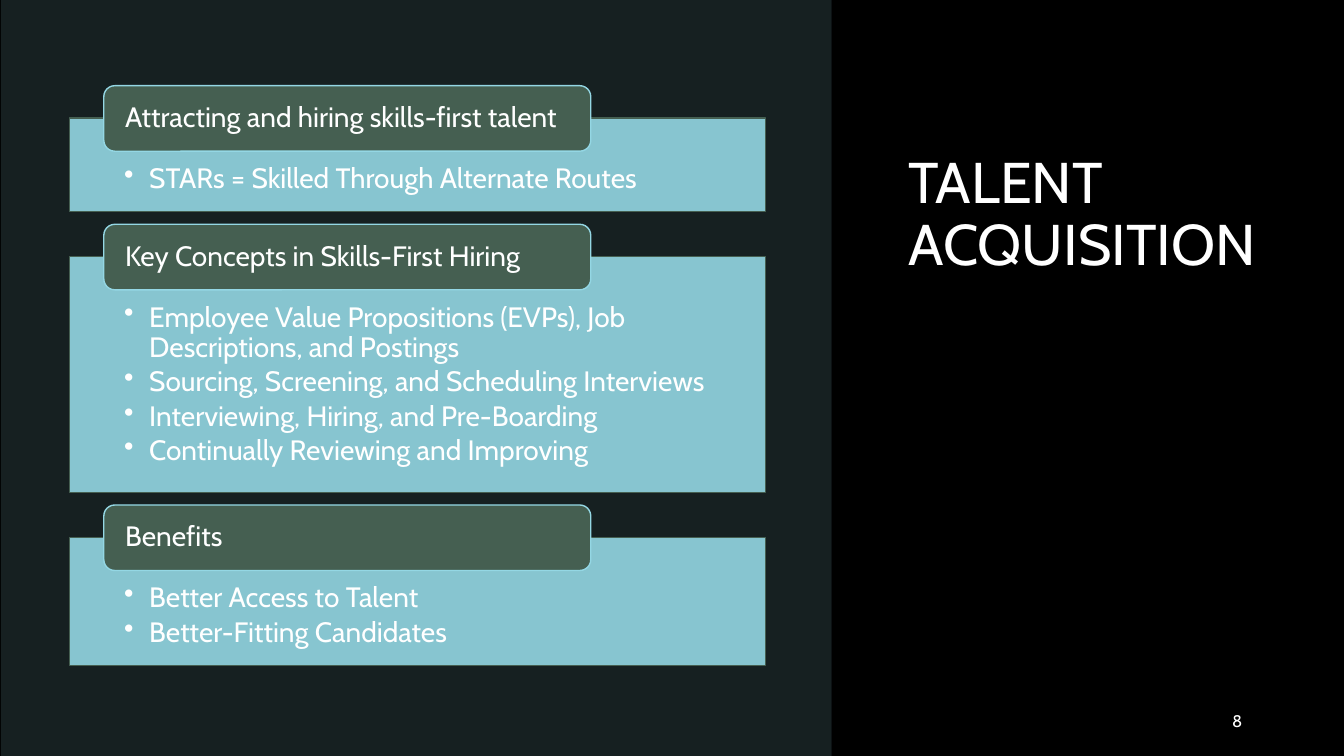
"""Build the talent acquisition slide."""
from lxml import etree
from pptx import Presentation
from pptx.dml.color import RGBColor
from pptx.enum.shapes import MSO_SHAPE
from pptx.enum.text import MSO_ANCHOR, MSO_AUTO_SIZE, PP_ALIGN
from pptx.oxml.ns import qn
from pptx.util import Inches, Pt

RECT, ROUND = MSO_SHAPE.RECTANGLE, MSO_SHAPE.ROUNDED_RECTANGLE
TOP, MIDDLE = MSO_ANCHOR.TOP, MSO_ANCHOR.MIDDLE
LEFT, RIGHT = PP_ALIGN.LEFT, PP_ALIGN.RIGHT
NO_FIT = MSO_AUTO_SIZE.NONE
BLACK = RGBColor(0x00, 0x00, 0x00)
WHITE = RGBColor(0xFF, 0xFF, 0xFF)
AQUA = RGBColor(0x94, 0xD7, 0xE4)
GREEN = RGBColor(0x45, 0x5F, 0x51)
FONT = "Cabin"

TITLE = "TALENT ACQUISITION"
NUMBER = "8"
CARDS = [
    ("Attracting and hiring skills-first talent", 0.93,
     ["STARs = Skilled Through Alternate Routes"]),
    ("Key Concepts in Skills-First Hiring", 2.34,
     ["Employee Value Propositions (EVPs), Job Descriptions, and Postings",
      "Sourcing, Screening, and Scheduling Interviews",
      "Interviewing, Hiring, and Pre-Boarding",
      "Continually Reviewing and Improving"]),
    ("Benefits", 1.27,
     ["Better Access to Talent", "Better-Fitting Candidates"]),
]
START, GAP, RISE = 1.17, 0.445, 0.32


def add_box(slide, kind, box, fill, line=None, alpha=None):
    """Add a flat shape, optionally outlined and see-through."""
    shape = slide.shapes.add_shape(kind, *map(Inches, box))
    shape.shadow.inherit = False
    shape.fill.solid()
    shape.fill.fore_color.rgb = fill
    if alpha:
        color = shape.fill._xPr.find(qn("a:solidFill"))[0]
        etree.SubElement(color, qn("a:alpha")).set("val", str(alpha * 1000))
    if line is None:
        shape.line.fill.background()
    else:
        shape.line.color.rgb = line
        shape.line.width = Pt(1)
    return shape


def write(shape, lines, size, insets=(0.1, 0.05, 0.1, 0.05), anchor=TOP,
          align=LEFT, bullet=False, after=0, spacing=0.9):
    """Fill a shape with evenly styled paragraphs."""
    frame = shape.text_frame
    frame.text = "\n".join(lines)
    frame.word_wrap = True
    frame.auto_size = NO_FIT
    frame.vertical_anchor = anchor
    (frame.margin_left, frame.margin_top,
     frame.margin_right, frame.margin_bottom) = map(Inches, insets)
    for para in frame.paragraphs:
        if bullet:
            props = para._p.get_or_add_pPr()
            props.set("marL", str(Inches(0.25)))
            props.set("indent", str(-Inches(0.25)))
            etree.SubElement(props, qn("a:buChar")).set("char", "•")
        para.alignment = align
        para.line_spacing = spacing
        para.space_after = Pt(after)
        para.font.name = FONT
        para.font.size = Pt(size)
        para.font.color.rgb = WHITE


def main():
    """Lay out the panels, cards, title and page number."""
    deck = Presentation()
    deck.slide_width, deck.slide_height = Inches(13.33), Inches(7.5)
    slide = deck.slides.add_slide(deck.slide_layouts[5])
    slide.background.fill.solid()
    slide.background.fill.fore_color.rgb = BLACK

    add_box(slide, RECT, (0.01, 0, 8.24, 7.5), AQUA, alpha=15)
    add_box(slide, RECT, (8.25, 0, 5.08, 7.5), BLACK)

    title = slide.shapes.title
    slide.shapes._spTree.append(title._element)
    title.left, title.top = Inches(8.91), Inches(1.48)
    title.width, title.height = Inches(3.74), Inches(5.28)
    write(title, [TITLE], 41)

    top = START
    for head, height, points in CARDS:
        body = add_box(slide, RECT, (0.69, top, 6.9, height),
                       AQUA, GREEN, 90)
        write(body, points, 20, (0.54, 0.46, 0.54, 0.16),
              bullet=True, after=3)
        label = add_box(slide, ROUND, (1.03, top - RISE, 4.83, 0.65),
                        GREEN, AQUA)
        write(label, [head], 20, (0.18, 0, 0.18, 0), MIDDLE)
        top += height + GAP

    page = slide.shapes.add_textbox(*map(Inches, (9.42, 6.95, 3, 0.4)))
    write(page, [NUMBER], 12, anchor=MIDDLE, align=RIGHT, spacing=1.0)
    deck.save("out.pptx")


if __name__ == "__main__":
    main()
